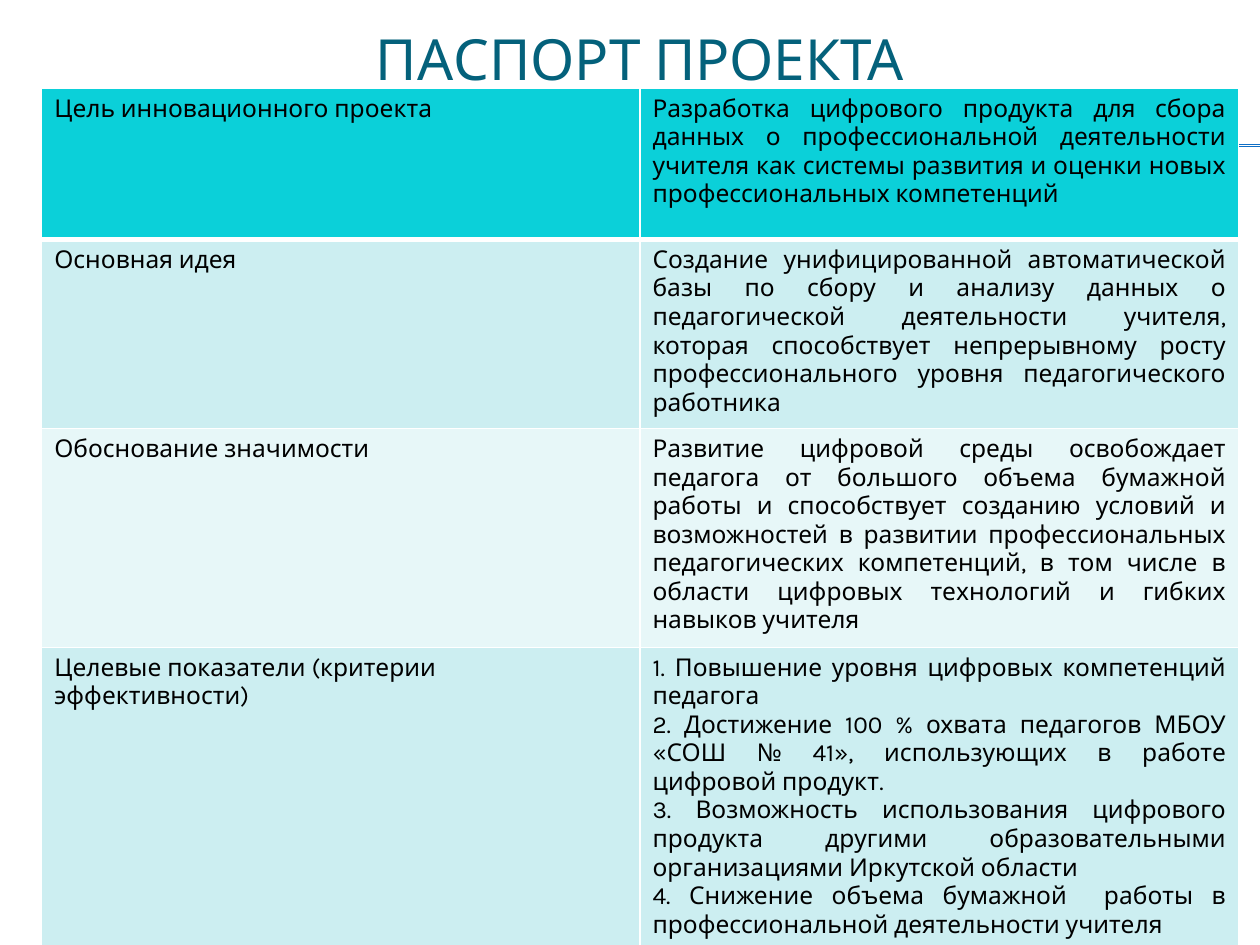
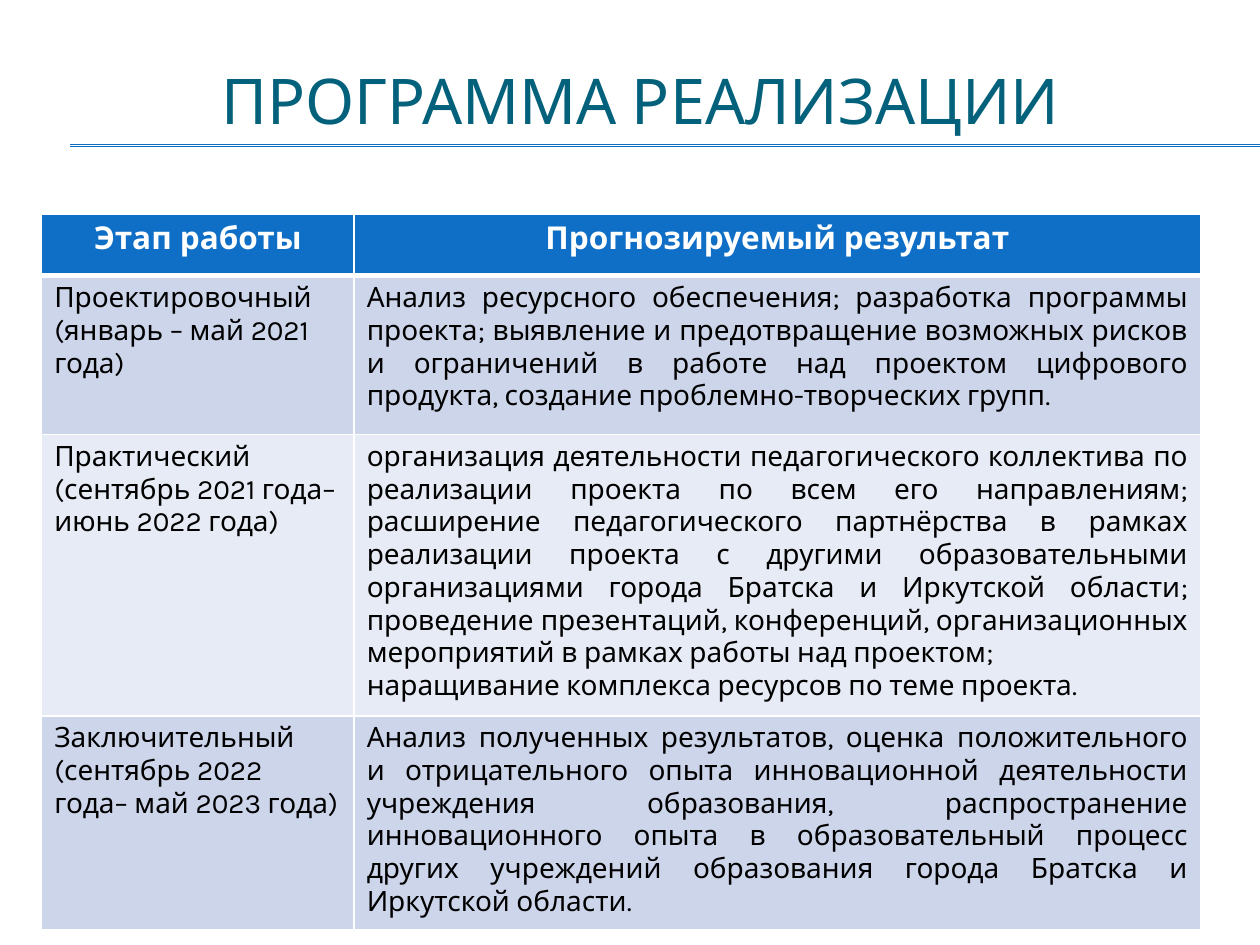
from dataclasses import dataclass

from lxml import etree
from pptx import Presentation
from pptx import util as u
from pptx.dml.color import RGBColor
from pptx.enum import shapes, text
from pptx.oxml.ns import qn


@dataclass(frozen=True)
class Theme:
    font: str = "Karla"
    title: str = "04617B"
    rule: str = "0F6FC6"
    ink: str = "000000"
    white: str = "FFFFFF"
    rule_pt: float = 0.75
    border_pt: int = 1
    header_border_pt: int = 3


THEME = Theme()
LEFT, PAGE_WIDTH, PAGE_HEIGHT, TITLE_WIDTH = 0.84, 25.4, 19.05, 24.13
RULE_LEFT, RULE_TOPS = 1.42, (2.92, 2.95)
LEFT_AL, CENTER, JUSTIFY = (
    text.PP_ALIGN.LEFT, text.PP_ALIGN.CENTER, text.PP_ALIGN.JUSTIFY)

# Each cell is a list of paragraphs; lengths are centimetres.
PASSPORT = dict(
    title="ПАСПОРТ ПРОЕКТА", title_pt=32.4, title_top=0.58, title_height=1.19,
    top=1.78, columns=(12.06, 12.07), heights=(3.05, 3.63, 4.19, 5.99),
    header=dict(fill="0BD0D9", color=THEME.ink, pt=14, bold=False,
                aligns=(LEFT_AL, JUSTIFY)),
    bands=("CCEEF1", "E7F7F8"), body_pt=14,
    rows=[
        (["Цель инновационного проекта"],
         ["Разработка цифрового продукта для сбора данных о профессиональной "
          "деятельности учителя как системы развития и оценки новых "
          "профессиональных компетенций"]),
        (["Основная идея"],
         ["Создание унифицированной автоматической базы по сбору и анализу "
          "данных о педагогической деятельности учителя, которая способствует "
          "непрерывному росту профессионального уровня педагогического "
          "работника"]),
        (["Обоснование значимости"],
         ["Развитие цифровой среды освобождает педагога от большого объема "
          "бумажной работы и способствует созданию условий и возможностей в "
          "развитии профессиональных педагогических компетенций, в том числе "
          "в области цифровых технологий и гибких навыков учителя"]),
        (["Целевые показатели (критерии эффективности)"],
         ["1. Повышение уровня цифровых компетенций педагога",
          "2. Достижение 100 % охвата педагогов МБОУ «СОШ № 41», использующих "
          "в работе цифровой продукт.",
          "3. Возможность использования цифрового продукта другими "
          "образовательными организациями Иркутской области",
          "4. Снижение объема бумажной  работы в профессиональной "
          "деятельности учителя"]),
    ],
)

PROGRAMME = dict(
    title="ПРОГРАММА РЕАЛИЗАЦИИ", title_pt=36, title_top=0.41, title_height=3.2,
    top=4.32, columns=(6.3, 17.07), heights=(1.24, 3.2, 5.36, 3.91),
    header=dict(fill=THEME.rule, color=THEME.white, pt=18, bold=True,
                aligns=(CENTER, CENTER)),
    bands=("CCD5EA", "E7EBF5"), body_pt=16,
    rows=[
        (["Этап работы"], ["Прогнозируемый результат"]),
        (["Проектировочный", "(январь – май 2021 года)"],
         ["Анализ ресурсного обеспечения; разработка программы проекта; "
          "выявление и предотвращение возможных рисков и ограничений в работе "
          "над проектом цифрового продукта, создание проблемно-творческих "
          "групп."]),
        (["Практический", "(сентябрь 2021 года– июнь 2022 года)"],
         ["организация деятельности педагогического коллектива по реализации "
          "проекта по всем его направлениям; расширение педагогического "
          "партнёрства в рамках реализации проекта с другими образовательными "
          "организациями города Братска и Иркутской области; проведение "
          "презентаций, конференций, организационных мероприятий в рамках "
          "работы над проектом;",
          "наращивание комплекса ресурсов по теме проекта."]),
        (["Заключительный", "(сентябрь 2022 года– май 2023 года)"],
         ["Анализ полученных результатов, оценка положительного и "
          "отрицательного опыта инновационной деятельности учреждения "
          "образования, распространение инновационного опыта в "
          "образовательный процесс других учреждений образования города "
          "Братска и Иркутской области."]),
    ],
)


def write(frame, paragraphs, pt, color, align, bold=False):
    for i, line in enumerate(paragraphs):
        p = frame.paragraphs[0] if i == 0 else frame.add_paragraph()
        p.text = line
        p.alignment = align
        p.font.name, p.font.size, p.font.bold = THEME.font, u.Pt(pt), bold
        p.font.color.rgb = RGBColor.from_string(color)


def add_rules(slide):
    for top in RULE_TOPS:
        rule = slide.shapes.add_connector(
            shapes.MSO_CONNECTOR.STRAIGHT,
            u.Cm(RULE_LEFT), u.Cm(top), u.Cm(PAGE_WIDTH), u.Cm(top))
        rule.line.color.rgb = RGBColor.from_string(THEME.rule)
        rule.line.width = u.Pt(THEME.rule_pt)
        etree.SubElement(rule.line._get_or_add_ln().getparent(),
                         qn("a:effectLst"))


def add_title(slide, content):
    title = slide.shapes.add_textbox(
        u.Cm(LEFT), u.Cm(content["title_top"]),
        u.Cm(TITLE_WIDTH), u.Cm(content["title_height"]))
    frame = title.text_frame
    frame.word_wrap = True
    frame.vertical_anchor = text.MSO_ANCHOR.MIDDLE
    frame.margin_top = frame.margin_bottom = 0
    write(frame, [content["title"]], content["title_pt"], THEME.title, CENTER)


def set_borders(cell, row):
    """Draw thin white borders, with a thick one between header and body."""
    thick = {0: "lnB", 1: "lnT"}.get(row)
    properties = cell._tc.get_or_add_tcPr()
    for side in ("lnL", "lnR", "lnT", "lnB"):
        points = THEME.header_border_pt if side == thick else THEME.border_pt
        line = etree.SubElement(properties, qn(f"a:{side}"), w=str(u.Pt(points)))
        fill = etree.SubElement(line, qn("a:solidFill"))
        etree.SubElement(fill, qn("a:srgbClr"), val=THEME.white)


def add_table(slide, content):
    columns, heights, rows = content["columns"], content["heights"], content["rows"]
    table = slide.shapes.add_table(
        len(rows), len(columns), u.Cm(LEFT), u.Cm(content["top"]),
        u.Cm(sum(columns)), u.Cm(sum(heights))).table
    table.first_row = table.horz_banding = False
    for column, width in zip(table.columns, columns):
        column.width = u.Cm(width)
    for r, (entries, height) in enumerate(zip(rows, heights)):
        table.rows[r].height = u.Cm(height)
        style = content["header"] if r == 0 else dict(
            fill=content["bands"][(r - 1) % 2], color=THEME.ink,
            pt=content["body_pt"], bold=False, aligns=(LEFT_AL, JUSTIFY))
        for c, paragraphs in enumerate(entries):
            cell = table.cell(r, c)
            set_borders(cell, r)
            cell.fill.solid()
            cell.fill.fore_color.rgb = RGBColor.from_string(style["fill"])
            write(cell.text_frame, paragraphs, style["pt"], style["color"],
                  style["aligns"][c], style["bold"])


def main():
    deck = Presentation()
    deck.slide_width, deck.slide_height = u.Cm(PAGE_WIDTH), u.Cm(PAGE_HEIGHT)
    for content in (PASSPORT, PROGRAMME):
        slide = deck.slides.add_slide(deck.slide_layouts[6])
        add_rules(slide)
        add_title(slide, content)
        add_table(slide, content)
    deck.save("out.pptx")


if __name__ == "__main__":
    main()
